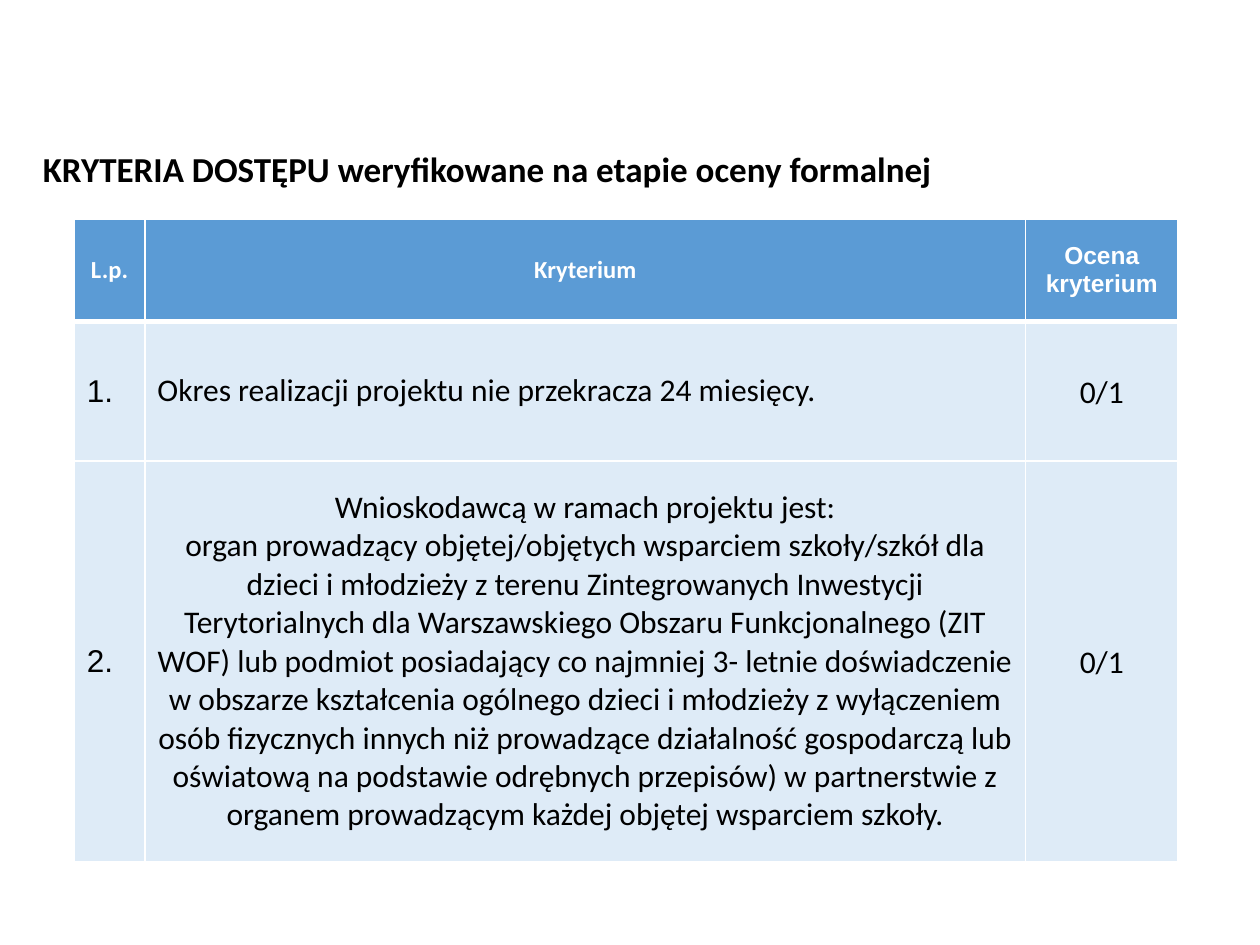
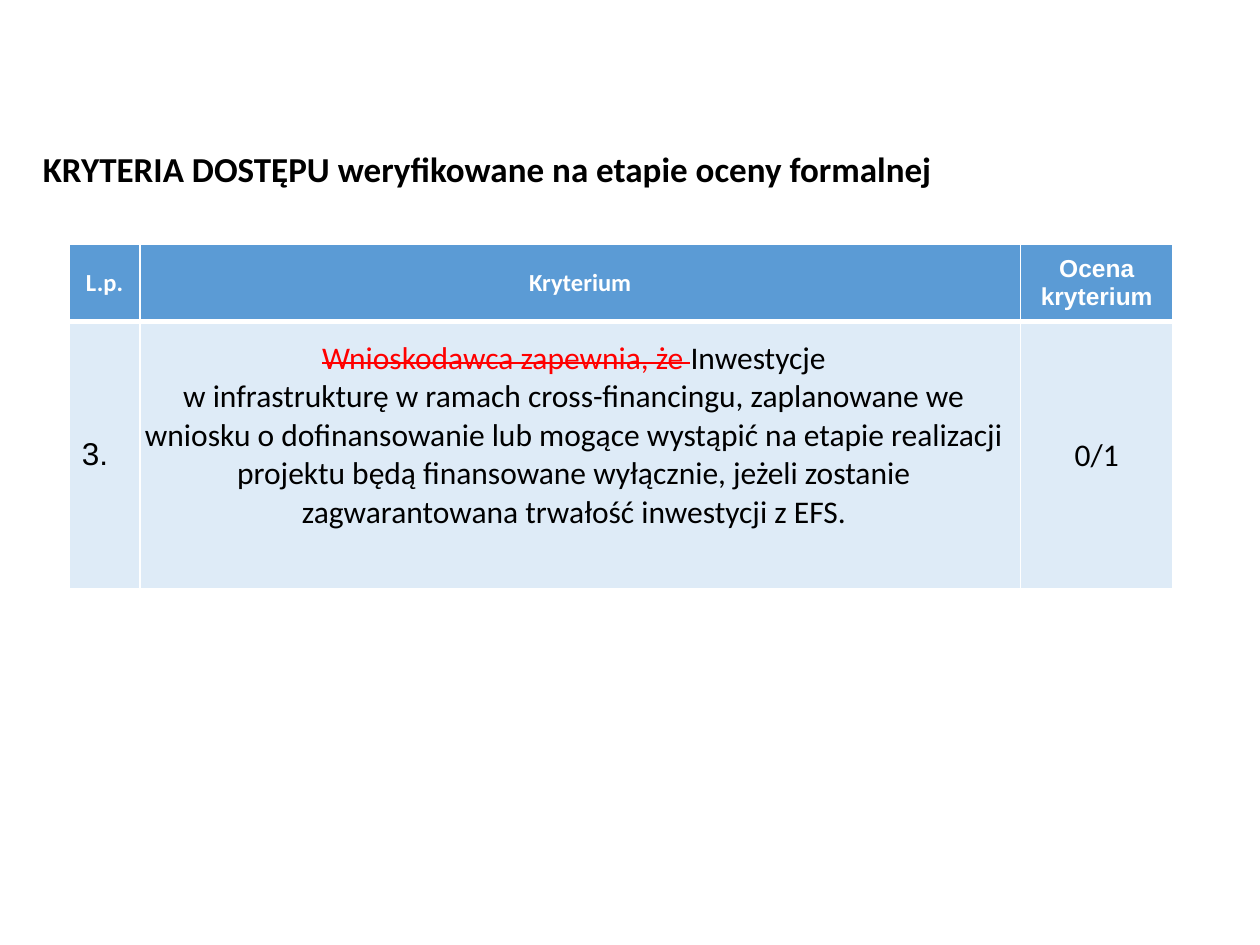
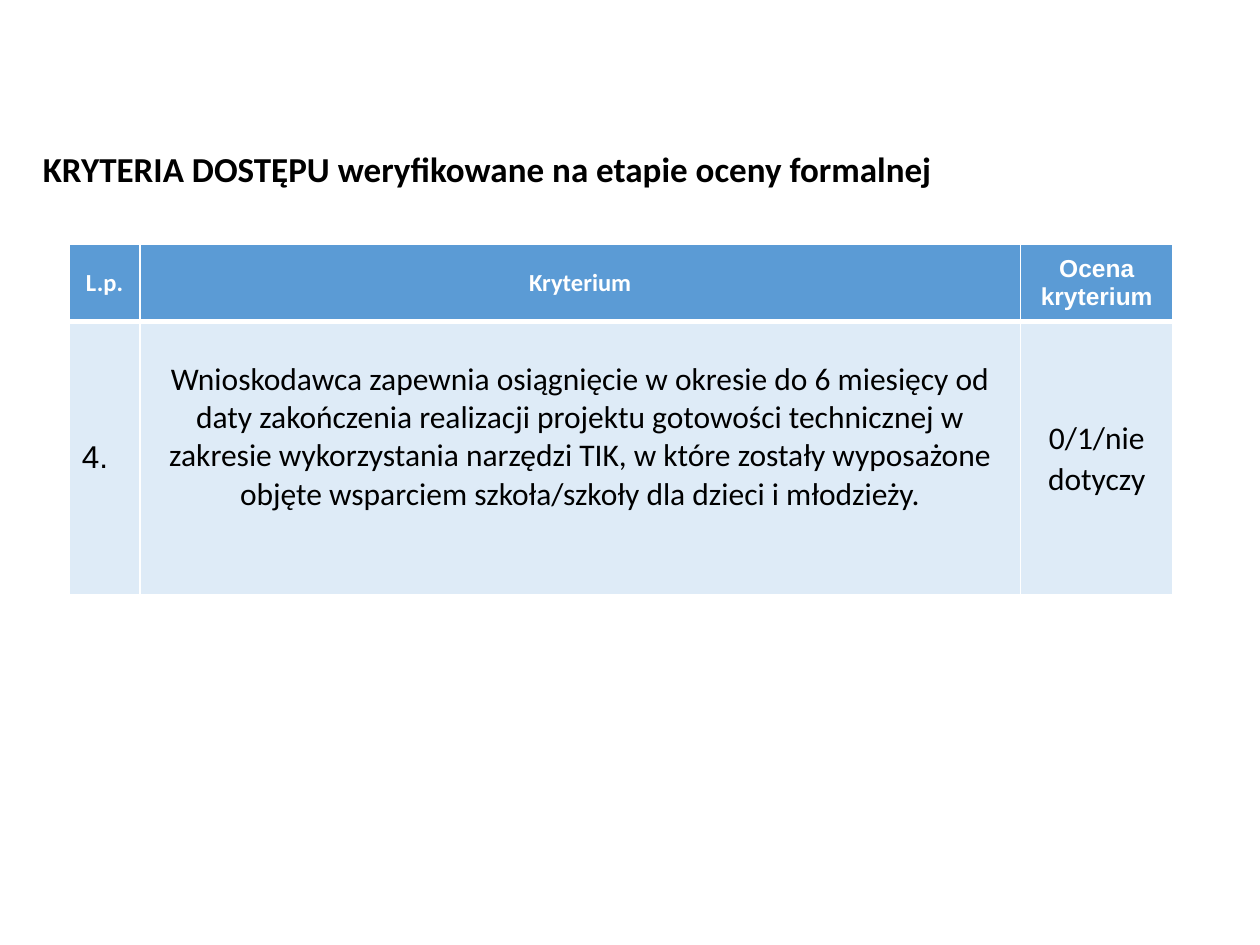
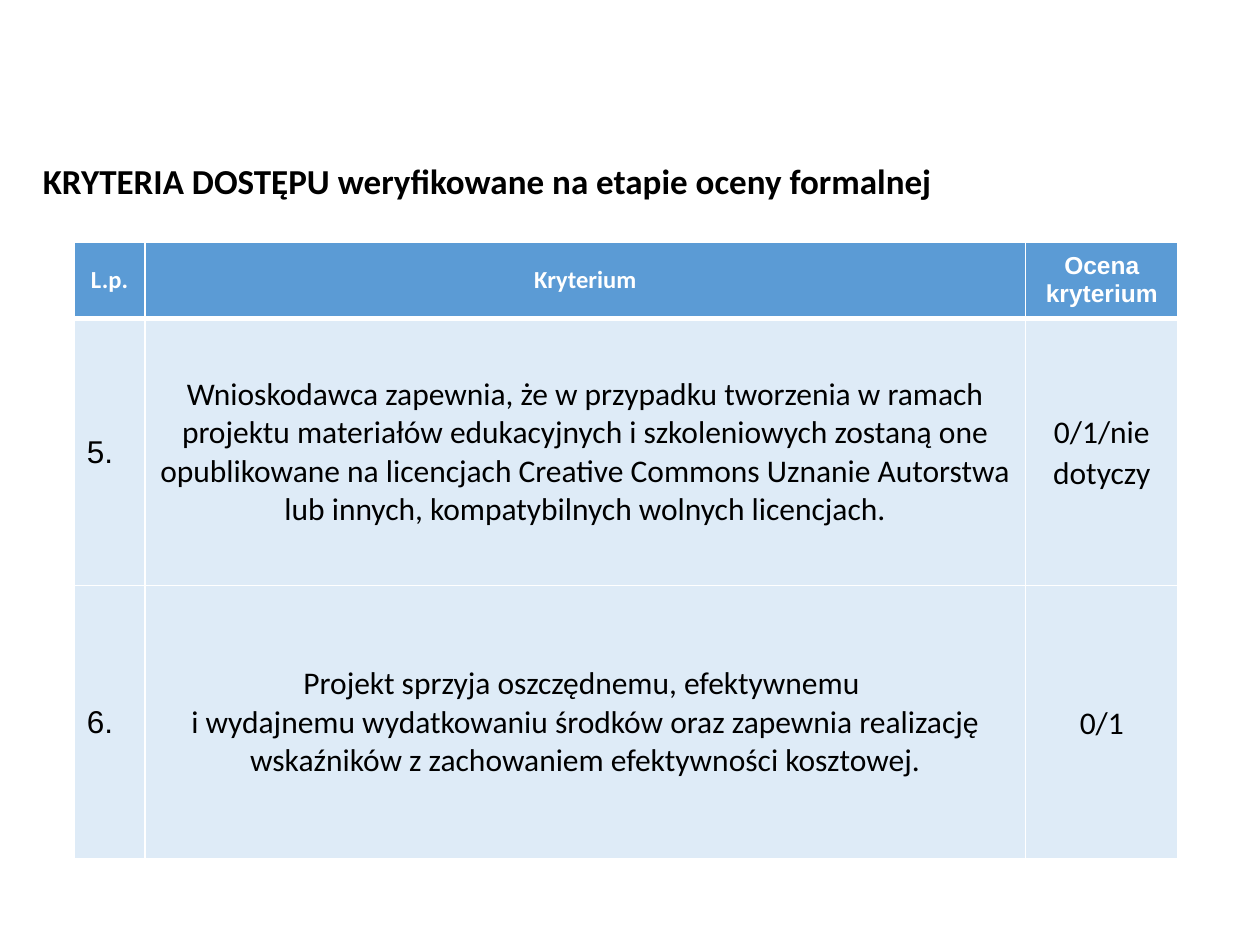
from dataclasses import dataclass, field

from lxml import etree
from pptx import Presentation
from pptx.dml.color import RGBColor
from pptx.enum.text import MSO_ANCHOR, MSO_AUTO_SIZE, PP_ALIGN
from pptx.oxml.ns import qn
from pptx.util import Pt

LEFT, CENTER = PP_ALIGN.LEFT, PP_ALIGN.CENTER
MIDDLE = MSO_ANCHOR.MIDDLE
GROW = MSO_AUTO_SIZE.SHAPE_TO_FIT_TEXT
TITLE_ONLY = 5

TITLE = "KRYTERIA DOSTĘPU weryfikowane na etapie oceny formalnej"
HEADINGS = ["L.p.", "Kryterium", "Ocena kryterium"]


@dataclass
class Theme:
    """Colours, fonts, type sizes and shared measures in points."""
    black: str = "000000"
    white: str = "FFFFFF"
    red: str = "FF0000"
    header: str = "5B9BD5"
    body: str = "DEEBF7"
    font: str = "Calibri"
    number_font: str = "Arial"
    title_size: float = 20
    header_size: float = 14
    body_size: float = 18
    thin: float = 1
    thick: float = 3
    page: tuple = (720, 540)
    columns: tuple = (40.3, 503.3, 87.1)
    title_left: float = 17.3
    title_height: float = 31.7
    inset: dict = field(default_factory=lambda: dict(left=7.2, top=3.6, right=7.2, bottom=3.6))
    score_inset: dict = field(default_factory=lambda: dict.fromkeys(("left", "top", "right", "bottom"), 2.9))


THEME = Theme()


@dataclass
class Span:
    text: str
    color: str = THEME.black
    strike: bool = False


@dataclass
class Criterion:
    number: str
    paras: list
    score: str
    height: float
    align: int = CENTER
    inset: dict = field(default_factory=dict)


@dataclass
class CriteriaPage:
    left: float
    top: float
    title_top: float
    header_height: float
    criteria: list


PAGES = [
    CriteriaPage(42.5, 125.3, 80.6, 58.3, [
        Criterion("1.", ["Okres realizacji projektu nie przekracza 24 miesięcy."], "0/1", 79.9, LEFT),
        Criterion("2.", [
            "Wnioskodawcą w ramach projektu jest:",
            "organ prowadzący objętej/objętych wsparciem szkoły/szkół dla dzieci i młodzieży "
            "z terenu Zintegrowanych Inwestycji Terytorialnych dla Warszawskiego Obszaru "
            "Funkcjonalnego (ZIT WOF) lub podmiot posiadający co najmniej 3- letnie doświadczenie "
            "w obszarze kształcenia ogólnego dzieci i młodzieży z wyłączeniem osób fizycznych "
            "innych niż prowadzące działalność gospodarczą lub oświatową na podstawie odrębnych "
            "przepisów) w partnerstwie z organem prowadzącym każdej objętej wsparciem szkoły.",
        ], "0/1", 229),
    ]),
    CriteriaPage(39.6, 139.7, 80.6, 43.9, [
        Criterion("3.", [
            [Span("Wnioskodawca zapewnia, że ", THEME.red, True), Span("Inwestycje")],
            "w infrastrukturę w ramach cross-financingu, zaplanowane we wniosku o dofinansowanie "
            "lub mogące wystąpić na etapie realizacji projektu będą finansowane wyłącznie, jeżeli "
            "zostanie zagwarantowana trwałość inwestycji z EFS.",
        ], "0/1", 152.6, inset=dict(left=0, bottom=25.6)),
    ]),
    CriteriaPage(39.6, 139.7, 80.6, 43.9, [
        Criterion("4.", [
            "Wnioskodawca zapewnia osiągnięcie w okresie do 6 miesięcy od daty zakończenia "
            "realizacji projektu gotowości technicznej w zakresie wykorzystania narzędzi TIK, "
            "w które zostały wyposażone objęte wsparciem szkoła/szkoły dla dzieci i młodzieży.",
        ], "0/1/nie dotyczy", 156.2, inset=dict(bottom=27.6)),
    ]),
    CriteriaPage(42.5, 138.2, 87.1, 43.9, [
        Criterion("5.", [
            "Wnioskodawca zapewnia, że w przypadku tworzenia w ramach projektu materiałów "
            "edukacyjnych i szkoleniowych zostaną one opublikowane na licencjach Creative Commons "
            "Uznanie Autorstwa lub innych, kompatybilnych wolnych licencjach.",
        ], "0/1/nie dotyczy", 152.6),
        Criterion("6.", [
            "Projekt sprzyja oszczędnemu, efektywnemu ",
            "i wydajnemu wydatkowaniu środków oraz zapewnia realizację wskaźników "
            "z zachowaniem efektywności kosztowej.",
        ], "0/1", 156.2),
    ]),
]


def set_values(target, values):
    for name, value in values.items():
        setattr(target, name, value)


def write_paras(frame, paras, para_format, font_format):
    """Fill a text frame; a paragraph is a string or a list of spans."""
    for index, content in enumerate(paras):
        para = frame.paragraphs[0] if index == 0 else frame.add_paragraph()
        set_values(para, para_format)
        spans = content if isinstance(content, list) else [Span(content, font_format["color"])]
        for span in spans:
            run = para.add_run()
            run.text = span.text
            set_values(run.font, {k: v for k, v in font_format.items() if k != "color"})
            run.font.color.rgb = RGBColor.from_string(span.color)
            if span.strike:
                run.font._element.set("strike", "sngStrike")


def add_borders(cell, top, bottom):
    """Draw white lines on the four sides of a cell."""
    properties = cell._tc.get_or_add_tcPr()
    widths = {"a:lnL": THEME.thin, "a:lnR": THEME.thin, "a:lnT": top, "a:lnB": bottom}
    for tag, width in widths.items():
        line = etree.SubElement(properties, qn(tag), w=str(Pt(width)))
        fill = etree.SubElement(line, qn("a:solidFill"))
        etree.SubElement(fill, qn("a:srgbClr"), val=THEME.white)


def format_cell(cell, fill, inset, top, bottom):
    add_borders(cell, top, bottom)
    cell.fill.solid()
    cell.fill.fore_color.rgb = RGBColor.from_string(fill)
    cell.vertical_anchor = MIDDLE
    set_values(cell, {f"margin_{side}": Pt(size) for side, size in inset.items()})


def place_title(slide, left, top, width):
    title = slide.shapes.title
    set_values(title, dict(left=Pt(left), top=Pt(top), width=Pt(width), height=Pt(THEME.title_height)))
    set_values(title.text_frame, dict(word_wrap=True, auto_size=GROW, vertical_anchor=MIDDLE))
    write_paras(title.text_frame, [TITLE], dict(alignment=LEFT),
                dict(name=THEME.font, size=Pt(THEME.title_size), bold=True, color=THEME.black))


def fill_header(table):
    fonts = [THEME.font, THEME.font, THEME.number_font]
    for cell, heading, font in zip(table.rows[0].cells, HEADINGS, fonts):
        format_cell(cell, THEME.header, THEME.inset, THEME.thin, THEME.thick)
        write_paras(cell.text_frame, [heading], dict(alignment=CENTER),
                    dict(name=font, size=Pt(THEME.header_size), bold=True, color=THEME.white))


def fill_criterion(row, criterion, top_border):
    parts = [
        ([criterion.number], THEME.number_font, dict(alignment=LEFT), THEME.inset),
        (criterion.paras, THEME.font, dict(alignment=criterion.align), THEME.inset | criterion.inset),
        ([criterion.score], THEME.font, dict(alignment=CENTER, line_spacing=1.07), THEME.score_inset),
    ]
    for cell, (paras, font, para_format, inset) in zip(row.cells, parts):
        format_cell(cell, THEME.body, inset, top_border, THEME.thin)
        write_paras(cell.text_frame, paras, para_format,
                    dict(name=font, size=Pt(THEME.body_size), bold=False, color=THEME.black))


def add_criteria_table(slide, left, top, width, header_height, criteria):
    heights = [header_height] + [criterion.height for criterion in criteria]
    frame = slide.shapes.add_table(len(heights), len(THEME.columns),
                                   Pt(left), Pt(top), Pt(width), Pt(sum(heights)))
    table = frame.table
    table.horz_banding = False
    for column, size in zip(table.columns, THEME.columns):
        column.width = Pt(size)
    for row, height in zip(table.rows, heights):
        row.height = Pt(height)
    fill_header(table)
    for index, criterion in enumerate(criteria, start=1):
        top_border = THEME.thick if index == 1 else THEME.thin
        fill_criterion(table.rows[index], criterion, top_border)


def add_criteria_slide(deck, page):
    slide = deck.slides.add_slide(deck.slide_layouts[TITLE_ONLY])
    width = sum(THEME.columns)
    # The title ends at the right edge of the table
    place_title(slide, THEME.title_left, page.title_top, page.left + width - THEME.title_left)
    add_criteria_table(slide, page.left, page.top, width, page.header_height, page.criteria)


def main():
    deck = Presentation()
    deck.slide_width, deck.slide_height = map(Pt, THEME.page)
    for page in PAGES:
        add_criteria_slide(deck, page)
    deck.save("out.pptx")


if __name__ == "__main__":
    main()
